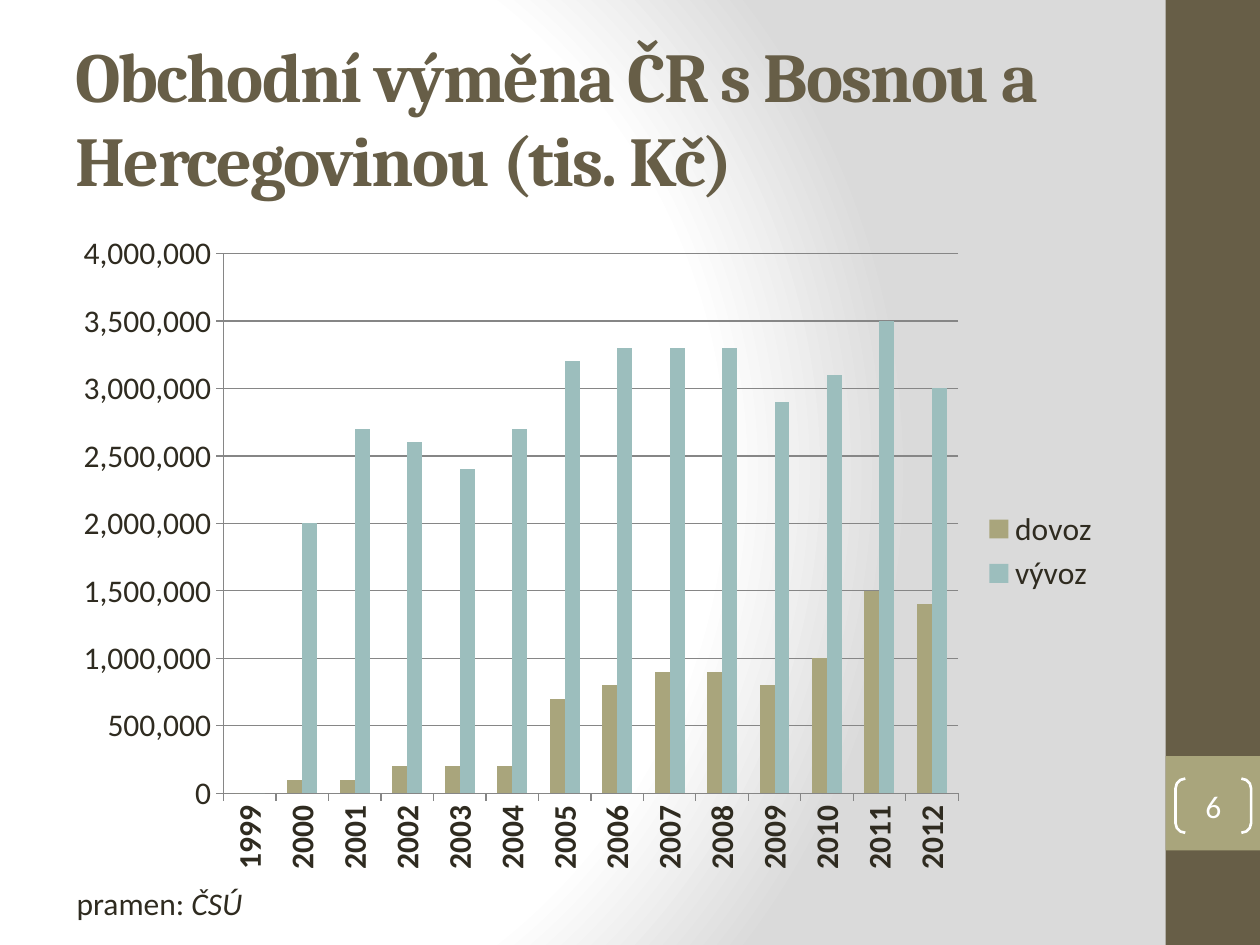
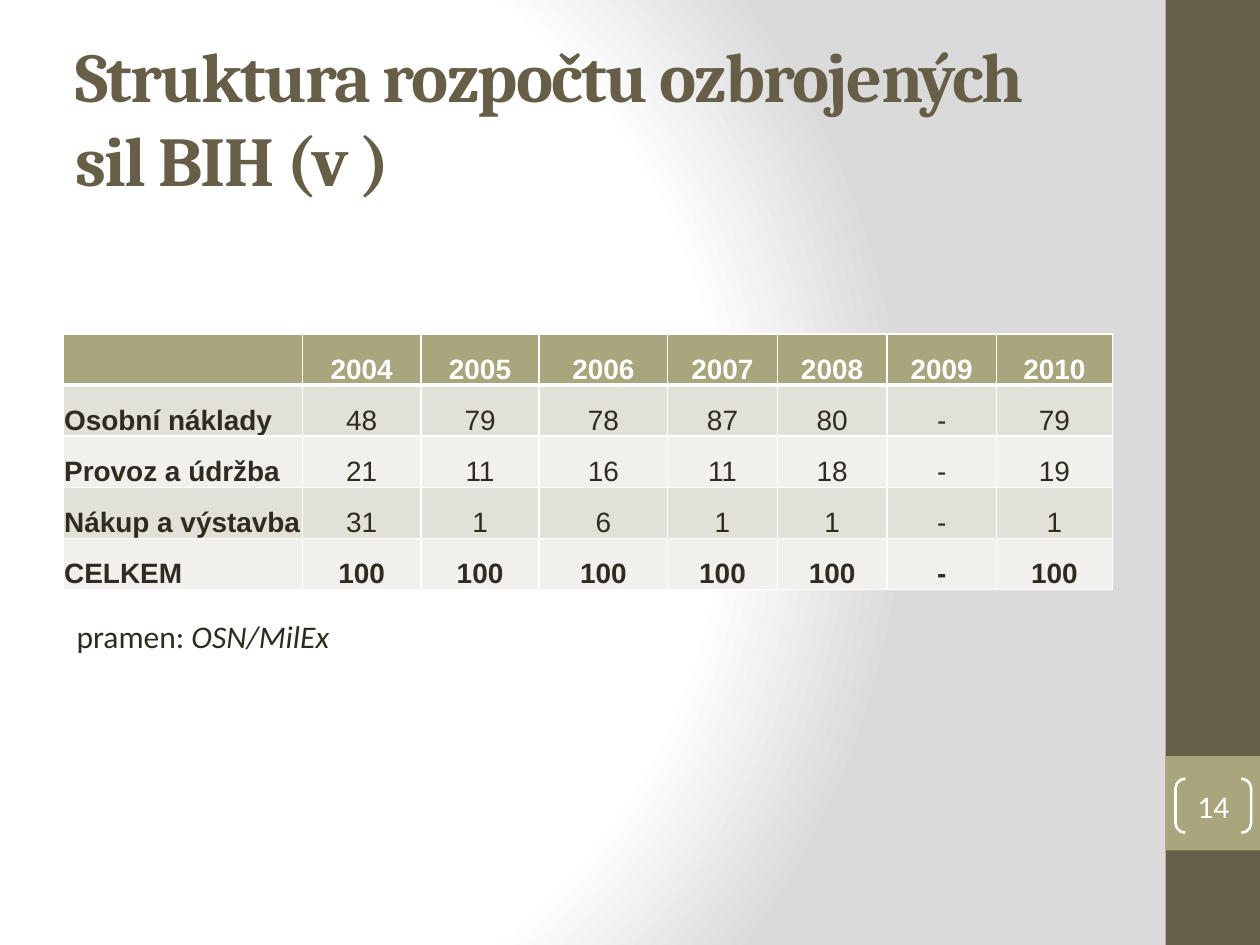
from typing import Any, NamedTuple

from lxml import etree
from pptx import Presentation
from pptx import util as u
from pptx.chart import data as cd
from pptx.dml import color as dml
from pptx.enum import chart as ec
from pptx.enum import shapes, text
from pptx.oxml import ns

HUES = {
    "dark": "675E47", "olive": "A9A57C", "teal": "9CBEBD", "ink": "2F2B20",
    "white": "FFFFFF", "mist": "DADADA", "grid": "868686",
    "odd": "E2E1D7", "even": "F1F0EC",
}
BODY, HEAD, CELL = "Calibri", "Cambria", "Arial"


class Box(NamedTuple):
    left: float
    top: float
    width: float
    height: float

    def place(self) -> tuple[u.Length, ...]:
        return tuple(u.Inches(side) for side in self)


class Band(NamedTuple):
    box: Box
    hue: str


class Series(NamedTuple):
    name: str
    hue: str
    values: list[int]


BANDS = [Band(Box(9.25, 0, 0.75, 7.5), "dark"), Band(Box(9.25, 6, 0.75, 0.75), "olive")]
TITLE = Box(0.5, 0.3, 8.33, 1.25)
BADGE = Box(9.33, 6.18, 0.6, 0.43)

CHART = Box(0.5, 1.75, 8.33, 5.25)
PLOT = {"x": 0.153, "y": 0.05, "w": 0.7, "h": 0.816}
YEARS = [str(year) for year in range(1999, 2013)]
TRADE = [
    Series("dovoz", "olive", [0, 100000, 100000, 200000, 200000, 200000, 700000, 800000,
                              900000, 900000, 800000, 1000000, 1500000, 1400000]),
    Series("vývoz", "teal", [0, 2000000, 2700000, 2600000, 2400000, 2700000, 3200000,
                             3300000, 3300000, 3300000, 2900000, 3100000, 3500000, 3000000]),
]

TABLE = Box(0.5, 2.65, 8.33, 2.03)
COLS = [1.9, 0.94, 0.94, 1.02, 0.87, 0.87, 0.87, 0.92]
COSTS = [
    ["", "2004", "2005", "2006", "2007", "2008", "2009", "2010"],
    ["Osobní náklady", "48", "79", "78", "87", "80", "-", "79"],
    ["Provoz a údržba", "21", "11", "16", "11", "18", "-", "19"],
    ["Nákup a výstavba", "31", "1", "6", "1", "1", "-", "1"],
    ["CELKEM", "100", "100", "100", "100", "100", "-", "100"],
]


def tint(hue: str) -> dml.RGBColor:
    return dml.RGBColor.from_string(HUES[hue])


def add(parent: Any, tag: str, **attrs: Any) -> Any:
    """Append an XML child with the given attributes."""
    return etree.SubElement(parent, ns.qn(tag), {k: str(v) for k, v in attrs.items()})


def style(font: Any, size: float, face: str, hue: str, bold: bool = False) -> None:
    font.size, font.name, font.bold = u.Pt(size), face, bold
    font.color.rgb = tint(hue)


def set_back(master: Any) -> None:
    """Give the master its round gradient."""
    master.background.fill.gradient()
    grad = master.element.find(".//" + ns.qn("a:gradFill"))
    grad.clear()
    stops = add(grad, "a:gsLst")
    for pos, hue in ((0, "white"), (75, "white"), (100, "mist")):
        add(add(stops, "a:gs", pos=pos * 1000), "a:srgbClr", val=HUES[hue])
    add(add(grad, "a:path", path="circle"), "a:fillToRect", l=20000, t=50000, r=100000, b=50000)


def add_frame(slide: Any, title: str, number: int) -> None:
    """Draw the bands, title and page number."""
    for band in BANDS:
        bar = slide.shapes.add_shape(shapes.MSO_SHAPE.RECTANGLE, *band.box.place())
        bar.shadow.inherit = False
        bar.fill.solid()
        bar.fill.fore_color.rgb = tint(band.hue)
        bar.line.fill.background()

    frame = slide.shapes.add_textbox(*TITLE.place()).text_frame
    frame.word_wrap = True
    frame.vertical_anchor = text.MSO_ANCHOR.MIDDLE
    frame.text = title
    run = frame.paragraphs[0].runs[0]
    style(run.font, 40, HEAD, "dark", True)
    run.font._element.set("spc", "-100")

    badge = slide.shapes.add_shape(shapes.MSO_SHAPE.DOUBLE_BRACKET, *BADGE.place())
    badge.shadow.inherit = False
    badge.adjustments[0] = 0.18
    badge.fill.background()
    badge.line.color.rgb = tint("white")
    badge.line.width = u.Pt(1.5)
    frame = badge.text_frame
    frame.margin_left = frame.margin_right = frame.margin_top = frame.margin_bottom = 0
    frame.vertical_anchor = text.MSO_ANCHOR.MIDDLE
    frame.text = str(number)
    line = frame.paragraphs[0]
    line.alignment = text.PP_ALIGN.CENTER
    style(line.runs[0].font, 18, BODY, "white")


def add_source(slide: Any, name: str, box: Box) -> None:
    frame = slide.shapes.add_textbox(*box.place()).text_frame
    frame.word_wrap = False
    frame.auto_size = text.MSO_AUTO_SIZE.SHAPE_TO_FIT_TEXT
    line = frame.paragraphs[0]
    for words, slant in (("pramen: ", False), (name, True)):
        run = line.add_run()
        run.text = words
        style(run.font, 18, BODY, "ink")
        run.font.italic = slant


def set_plot(chart: Any) -> None:
    """Fix the inner plot area as shares of the chart."""
    area = chart._chartSpace.find(".//" + ns.qn("c:plotArea"))
    for old in area.findall(ns.qn("c:layout")):
        area.remove(old)
    layout = add(area, "c:layout")
    area.insert(0, layout)
    manual = add(layout, "c:manualLayout")
    add(manual, "c:layoutTarget", val="inner")
    for side in "xy":
        add(manual, f"c:{side}Mode", val="edge")
    for side, share in PLOT.items():
        add(manual, f"c:{side}", val=share)


def add_trade(slide: Any) -> None:
    data = cd.CategoryChartData(number_format="#,##0")
    data.categories = YEARS
    for item in TRADE:
        data.add_series(item.name, item.values)
    kind = ec.XL_CHART_TYPE.COLUMN_CLUSTERED
    chart = slide.shapes.add_chart(kind, *CHART.place(), data).chart
    style(chart.font, 18, BODY, "ink")
    chart.has_title = False
    chart.has_legend = True
    chart.legend.position = ec.XL_LEGEND_POSITION.RIGHT
    chart.legend.include_in_layout = False

    plot = chart.plots[0]
    plot.gap_width, plot.overlap, plot.vary_by_categories = 150, 0, False
    for bars, item in zip(plot.series, TRADE):
        bars.invert_if_negative = False
        bars.format.fill.solid()
        bars.format.fill.fore_color.rgb = tint(item.hue)

    years, sums = chart.category_axis, chart.value_axis
    sums.minimum_scale, sums.maximum_scale, sums.major_unit = 0, 4000000, 500000
    sums.has_major_gridlines = True
    for line in (years.format.line, sums.format.line, sums.major_gridlines.format.line):
        line.color.rgb = tint("grid")
        line.width = u.Pt(0.75)
    for axis in (years, sums):
        axis.major_tick_mark = ec.XL_TICK_MARK.OUTSIDE
    sums.tick_labels.number_format = "#,##0"
    sums.tick_labels.number_format_is_linked = False
    style(years.tick_labels.font, 18, BODY, "ink", True)
    turn = years._element.find(ns.qn("c:txPr")).find(ns.qn("a:bodyPr"))
    turn.set("rot", "-5400000")
    turn.set("vert", "horz")
    set_plot(chart)


def add_edges(cell: Any, row: int) -> None:
    """Draw white cell borders, thick below the header."""
    props = cell._tc.get_or_add_tcPr()
    thick = {(0, "B"), (1, "T")}
    for side in "LRTB":
        width = u.Pt(3 if (row, side) in thick else 1)
        edge = add(props, f"a:ln{side}", w=int(width))
        add(add(edge, "a:solidFill"), "a:srgbClr", val=HUES["white"])


def add_costs(slide: Any) -> None:
    table = slide.shapes.add_table(len(COSTS), len(COLS), *TABLE.place()).table
    table.first_row = table.horz_banding = False
    for col, width in zip(table.columns, COLS):
        col.width = u.Inches(width)
    for r, row in enumerate(COSTS):
        hue = "olive" if r == 0 else "odd" if r % 2 else "even"
        for c, words in enumerate(row):
            cell = table.cell(r, c)
            add_edges(cell, r)
            cell.fill.solid()
            cell.fill.fore_color.rgb = tint(hue)
            if not words:
                continue
            cell.margin_left = cell.margin_right = cell.margin_top = u.Inches(0.01)
            cell.margin_bottom = 0
            cell.vertical_anchor = text.MSO_ANCHOR.BOTTOM
            cell.text_frame.text = words
            line = cell.text_frame.paragraphs[0]
            line.alignment = text.PP_ALIGN.CENTER if c else text.PP_ALIGN.LEFT
            bold = c == 0 or r in (0, len(COSTS) - 1)
            style(line.runs[0].font, 16, CELL, "ink" if r else "white", bold)


def main() -> None:
    deck = Presentation()
    deck.slide_width, deck.slide_height = u.Inches(10), u.Inches(7.5)
    set_back(deck.slide_master)
    blank = deck.slide_layouts[6]

    trade = deck.slides.add_slide(blank)
    add_frame(trade, "Obchodní výměna ČR s Bosnou a Hercegovinou (tis. Kč)", 6)
    add_trade(trade)
    add_source(trade, "ČSÚ", Box(0.51, 6.97, 1.54, 0.4))

    costs = deck.slides.add_slide(blank)
    add_frame(costs, "Struktura rozpočtu ozbrojených sil BIH (v )", 14)
    add_costs(costs)
    add_source(costs, "OSN/MilEx", Box(0.51, 4.85, 2.23, 0.4))

    deck.save("out.pptx")


if __name__ == "__main__":
    main()
